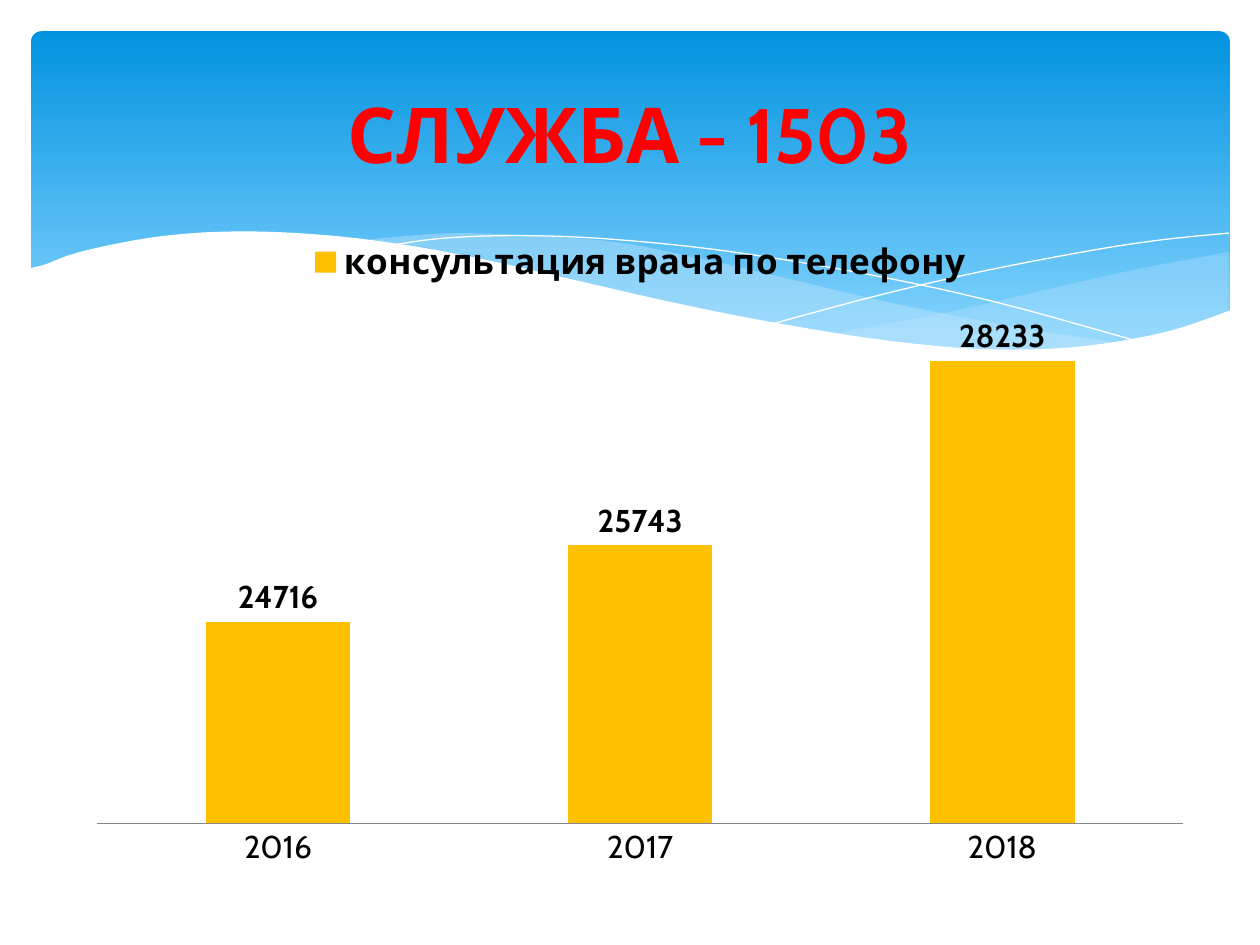
"""Build a slide with a wavy blue banner and a column chart of phone consultations."""
from dataclasses import dataclass

from lxml.etree import SubElement
from pptx import Presentation
from pptx.chart.data import CategoryChartData
from pptx.dml.color import RGBColor as RGB
from pptx.enum.chart import XL_CHART_TYPE as ChartType
from pptx.enum.chart import XL_LABEL_POSITION as LabelPos
from pptx.enum.chart import XL_LEGEND_POSITION as LegendPos
from pptx.enum.chart import XL_TICK_MARK as Tick
from pptx.enum.shapes import MSO_SHAPE as Shape
from pptx.enum.text import MSO_ANCHOR as Anchor
from pptx.enum.text import PP_ALIGN as Align
from pptx.oxml.ns import qn
from pptx.util import Cm, Pt


@dataclass(frozen=True)
class Theme:
    font: str = "Cabin"
    sky_top: RGB = RGB(0x02, 0x93, 0xE0)
    sky_bottom: RGB = RGB(0x83, 0xD3, 0xFE)
    mist: RGB = RGB(0xC6, 0xE7, 0xFC)
    white: RGB = RGB(0xFF, 0xFF, 0xFF)
    title: RGB = RGB(0xFF, 0, 0)
    text: RGB = RGB(0, 0, 0)
    bar: RGB = RGB(0xFF, 0xC0, 0)
    axis: RGB = RGB(0x86, 0x86, 0x86)
    title_size: Pt = Pt(44)
    legend_size: Pt = Pt(20)
    chart_size: Pt = Pt(18)


THEME = Theme()

RIGHT_MIST = [
    [(24.77, 5.08), (23.01, 5.41), (21.87, 5.66), (19.13, 6.29), (16.79, 6.73)],
    [(16.79, 6.73), (18.59, 6.96), (20.12, 7.04), (21.69, 7.01), (22.99, 6.83),
     (23.93, 6.58), (24.77, 6.27)],
]
MIDDLE_MIST = [
    [(22.68, 6.93), (20.5, 6.6), (17.93, 6.1), (15.98, 5.64), (14.1, 5.21),
     (12.42, 4.88), (10.67, 4.75), (9.17, 4.7), (7.95, 4.78), (7.26, 4.85)],
    [(7.26, 4.85), (9.19, 5.16), (11.4, 5.64), (14.38, 6.3), (16.51, 6.71),
     (18.69, 6.99), (20.78, 7.06), (22.68, 6.93)],
]
FALLING_LINE = [
    [(7.85, 4.95), (8.97, 4.8), (10.57, 4.75), (12.42, 4.83), (14.78, 5.08),
     (17.65, 5.56), (20.19, 6.12), (23.04, 6.91)],
]
RISING_LINE = [
    [(15.57, 6.53), (17.65, 5.97), (19.71, 5.49), (22, 5.05), (23.47, 4.83), (24.77, 4.7)],
]
WHITE_WAVE = [
    [(24.82, 6.25), (23.62, 6.66), (22.23, 6.93), (20.9, 7.04), (19.33, 7.01),
     (17.48, 6.81), (15.32, 6.45), (13.44, 6.07), (11.35, 5.59), (9.27, 5.13),
     (7.42, 4.83), (5.84, 4.69), (4.49, 4.67), (3.35, 4.75), (2.41, 4.9),
     (1.5, 5.11), (0.91, 5.33), (0.58, 5.41)],
    [(0.58, 5.41), (0.58, 8.36)],
    [(0.58, 8.36), (24.82, 8.36)],
]


def smooth(knots, steps=6):
    ends = [knots[0], *knots, knots[-1]]
    points = [knots[0]]
    for a, b, c, d in zip(ends, ends[1:], ends[2:], ends[3:]):
        for i in range(1, steps + 1):
            t = i / steps
            points.append(tuple(
                q + t / 2 * (r - p + t * (2 * p - 5 * q + 4 * r - s + t * (3 * q - p - 3 * r + s)))
                for p, q, r, s in zip(a, b, c, d)))
    return points


def add_curve(s, edges, closed):
    points = [(Cm(x), Cm(y)) for edge in edges for x, y in smooth(edge)]
    builder = s.shapes.build_freeform(*points[0])
    builder.add_line_segments(points[1:], close=closed)
    sp = builder.convert_to_shape()
    sp.shadow.inherit = False
    return sp


def add_wave(s, edges, color, opacity=100):
    sp = add_curve(s, edges, True)
    sp.fill.solid()
    sp.fill.fore_color.rgb = color
    sp.line.fill.background()
    if opacity < 100:
        clr = sp._element.spPr.find(qn("a:solidFill"))[0]
        SubElement(clr, qn("a:alpha")).set("val", str(opacity * 1000))


def add_thread(s, edges):
    sp = add_curve(s, edges, False)
    sp.fill.background()
    sp.line.color.rgb = THEME.white
    sp.line.width = Pt(0)


def add_banner(s):
    sp = s.shapes.add_shape(Shape.ROUNDED_RECTANGLE, Cm(0.63), Cm(0.63), Cm(24.16), Cm(6.86))
    sp.adjustments[0] = 0.03
    sp.shadow.inherit = False
    sp.line.fill.background()
    sp.fill.gradient()
    sp.fill.gradient_angle = 270
    top, bottom = sp.fill.gradient_stops
    top.color.rgb, top.position = THEME.sky_top, 0
    bottom.color.rgb, bottom.position = THEME.sky_bottom, 0.9


def add_title(s, text):
    tf = s.shapes.add_textbox(Cm(1.27), Cm(0.94), Cm(22.86), Cm(3.48)).text_frame
    tf.word_wrap = True
    tf.vertical_anchor = Anchor.MIDDLE
    tf.text = text
    p = tf.paragraphs[0]
    p.alignment = Align.CENTER
    style_font(p.runs[0].font, THEME.title_size, THEME.title, True)


def style_font(font, size, color, bold):
    font.name, font.size, font.bold = THEME.font, size, bold
    font.color.rgb = color


def add_column_chart(s, name, cats, vals):
    data = CategoryChartData()
    data.categories = cats
    data.add_series(name, vals)
    chart = s.shapes.add_chart(ChartType.COLUMN_CLUSTERED, Cm(1.5), Cm(4.52),
                               Cm(22.81), Cm(13.21), data).chart
    style_font(chart.font, THEME.chart_size, THEME.text, False)
    chart.has_title = False
    chart.has_legend = True
    chart.legend.position = LegendPos.TOP
    chart.legend.include_in_layout = False
    style_font(chart.legend.font, THEME.legend_size, THEME.text, True)

    axis = chart.value_axis
    axis.visible = False
    axis.has_major_gridlines = False
    axis.minimum_scale, axis.maximum_scale = 22000, 29000
    chart.category_axis.major_tick_mark = Tick.NONE
    chart.category_axis.format.line.color.rgb = THEME.axis

    plot = chart.plots[0]
    plot.vary_by_categories = False
    plot.gap_width, plot.overlap = 150, -25
    fill = plot.series[0].format.fill
    fill.solid()
    fill.fore_color.rgb = THEME.bar
    plot.has_data_labels = True
    labels = plot.data_labels
    labels.show_value = True
    labels.position = LabelPos.OUTSIDE_END
    style_font(labels.font, THEME.chart_size, THEME.text, True)


def main():
    prs = Presentation()
    prs.slide_width, prs.slide_height = Cm(25.4), Cm(19.05)
    s = prs.slides.add_slide(prs.slide_layouts[6])
    add_banner(s)
    add_wave(s, RIGHT_MIST, THEME.mist, 29)
    add_wave(s, MIDDLE_MIST, THEME.mist, 40)
    add_thread(s, FALLING_LINE)
    add_thread(s, RISING_LINE)
    add_wave(s, WHITE_WAVE, THEME.white)
    add_column_chart(s, "консультация врача по телефону",
                     ["2016", "2017", "2018"], [24716, 25743, 28233])
    add_title(s, "СЛУЖБА - 1503")
    prs.save("out.pptx")


if __name__ == "__main__":
    main()
